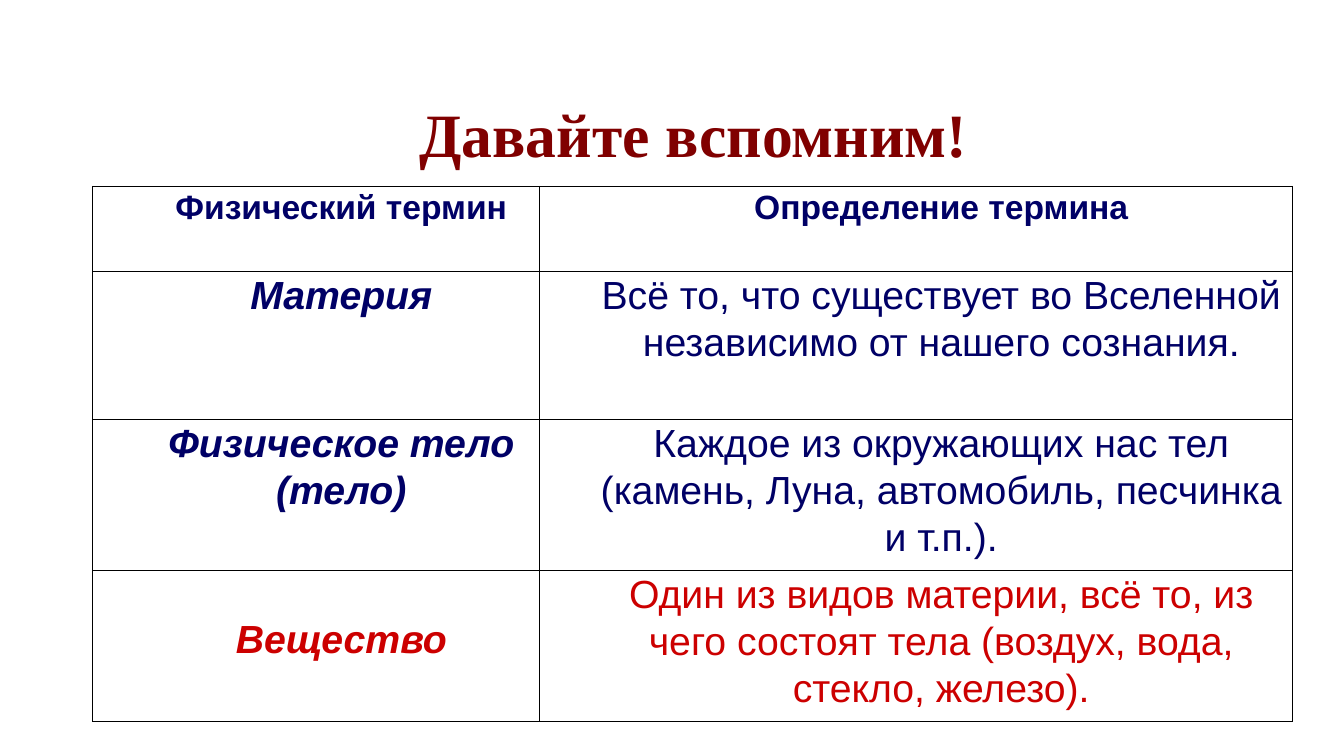
from lxml import etree
from pptx import Presentation
from pptx.dml.color import RGBColor
from pptx.enum import text
from pptx.oxml import ns
from pptx.util import Inches, Pt

COLORS = {"title": "800000", "term": "000066", "accent": "CC0000", "border": "000000"}


class SlideBuilder:
    """Holds the text style and the current slide."""

    body_font = "Arial"
    title_font = "Times New Roman"

    def __init__(self, presentation):
        self.slide = presentation.slides.add_slide(presentation.slide_layouts[6])

    def style(self, paragraph, size, color, font, spacing, bold=False, italic=False):
        paragraph.alignment = text.PP_ALIGN.CENTER
        paragraph.line_spacing = spacing
        paragraph.font.name = font
        paragraph.font.size = Pt(size)
        paragraph.font.bold = bold
        paragraph.font.italic = italic
        paragraph.font.color.rgb = RGBColor.from_string(COLORS[color])

    def title(self, words, left, top, width, height):
        shape = self.slide.shapes.add_textbox(
            Inches(left), Inches(top), Inches(width), Inches(height))
        frame = shape.text_frame
        frame.word_wrap = True
        frame.vertical_anchor = text.MSO_ANCHOR.MIDDLE
        frame.text = words
        self.style(frame.paragraphs[0], 44, "title", self.title_font, 0.9, bold=True)

    def border(self, cell):
        properties = cell._tc.get_or_add_tcPr()
        for side in ("lnL", "lnR", "lnT", "lnB"):
            line = etree.SubElement(properties, ns.qn(f"a:{side}"), w=str(Pt(1)))
            fill = etree.SubElement(line, ns.qn("a:solidFill"))
            etree.SubElement(fill, ns.qn("a:srgbClr"), val=COLORS["border"])

    def cell(self, cell, words, size, color, bold, italic, top_margin=0):
        cell.margin_left = cell.margin_right = Inches(0.07)
        cell.margin_top = Inches(top_margin)
        cell.margin_bottom = 0
        self.border(cell)
        cell.fill.background()
        cell.text = words
        paragraph = cell.text_frame.paragraphs[0]
        self.style(paragraph, size, color, self.body_font, 1.07, bold, italic)
        indent = paragraph._p.get_or_add_pPr()
        indent.set("marL", str(Inches(0.5)))
        indent.set("indent", "0")

    def table(self, rows, left, top, widths, heights):
        table = self.slide.shapes.add_table(
            len(rows), len(widths), Inches(left), Inches(top),
            Inches(sum(widths)), Inches(sum(heights))).table
        table.first_row = table.horz_banding = False
        for column, width in zip(table.columns, widths):
            column.width = Inches(width)
        for row, height in zip(table.rows, heights):
            row.height = Inches(height)
        for index, (term, definition, color, term_top) in enumerate(rows):
            header = index == 0
            size = 24 if header else 28
            self.cell(table.cell(index, 0), term, size, color, True, not header, term_top)
            self.cell(table.cell(index, 1), definition, size, color, header, False)


def main():
    presentation = Presentation()
    presentation.slide_width = Inches(13.33)
    presentation.slide_height = Inches(7.5)
    builder = SlideBuilder(presentation)

    # Heading
    builder.title("Давайте вспомним!", 1.13, 0.64, 11.5, 1.45)

    # Terms: term, definition, colour, top margin of the term
    terms = [
        ("Физический термин", "Определение термина", "term", 0),
        ("Материя",
         "Всё то, что существует во Вселенной независимо от нашего сознания.", "term", 0),
        ("Физическое тело (тело)",
         "Каждое из окружающих нас тел (камень, Луна, автомобиль, песчинка и т.п.).",
         "term", 0),
        ("Вещество",
         "Один из видов материи, всё то, из чего состоят тела (воздух, вода, стекло, железо).",
         "accent", 0.44),
    ]
    builder.table(terms, 0.92, 1.85, widths=[4.43, 7.47], heights=[0.84, 1.47, 1.39, 1.47])

    presentation.save("out.pptx")


if __name__ == "__main__":
    main()
